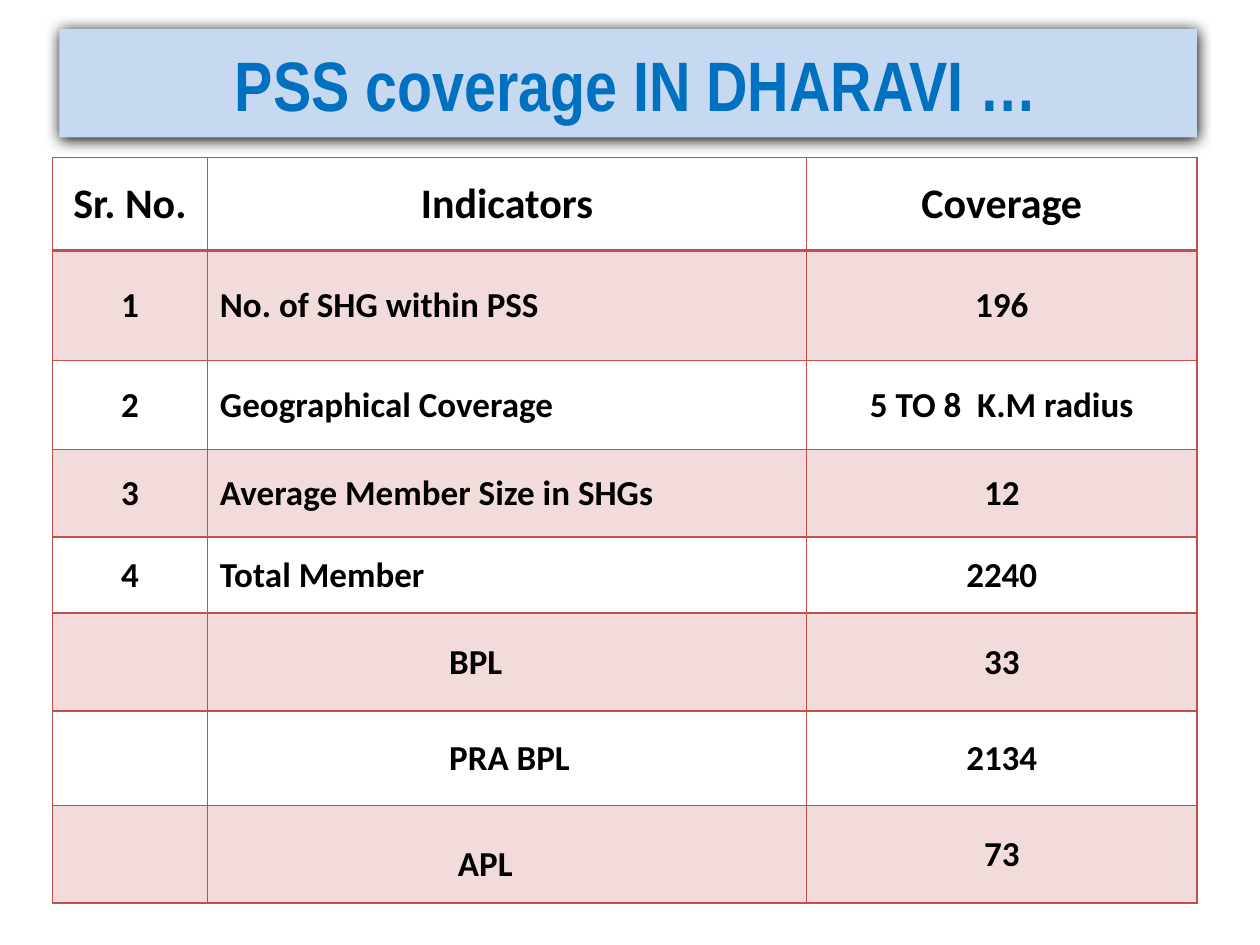
from lxml import etree
from pptx import Presentation
from pptx import util as u
from pptx.dml.color import RGBColor
from pptx.enum import text
from pptx.oxml import ns

RED = RGBColor(0xC0, 0x50, 0x4D)
BLUE = RGBColor(0x00, 0x70, 0xC0)
PALE = RGBColor(0xC6, 0xD9, 0xF1)
BLACK = RGBColor(0, 0, 0)
MID = text.MSO_ANCHOR.MIDDLE
LEFT, CENTER = text.PP_ALIGN.LEFT, text.PP_ALIGN.CENTER

WIDTHS = [88.5, 342.5, 223]
HEIGHTS = [53, 63, 51, 50, 43.5, 56, 54, 55.5]
ROWS = [
    ("Sr. No.", "Indicators", "Coverage"),
    ("1", "No. of SHG within PSS", "196"),
    ("2", "Geographical Coverage", "5 TO 8  K.M radius"),
    ("3", "Average Member Size in SHGs", "12"),
    ("4", "Total Member", "2240"),
    ("", "BPL", "33"),
    ("", "PRA BPL", "2134"),
    ("", "APL", "73"),
]
INDENTS = {"BPL": 131, "PRA BPL": 131, "APL": 136}


def add(parent, tag, **attrs):
    """Append a DrawingML element with the given attributes."""
    node = etree.SubElement(parent, ns.qn("a:" + tag))
    for key, value in attrs.items():
        node.set(key, str(value))
    return node


class Deck:
    fonts = {
        "title": {"name": "Arial Narrow", "size": u.Pt(40), "bold": True},
        "head": {"name": "Calibri", "size": u.Pt(24), "bold": True},
        "body": {"name": "Calibri", "size": u.Pt(20), "bold": True},
    }

    def __init__(self, wide, high):
        self.prs = Presentation()
        self.prs.slide_width, self.prs.slide_height = u.Pt(wide), u.Pt(high)
        self.slide = self.prs.slides.add_slide(self.prs.slide_layouts[5])

    def label(self, para, words, style, color, align):
        para.alignment = align
        run = para.add_run()
        run.text = words
        for key, value in self.fonts[style].items():
            setattr(run.font, key, value)
        run.font.color.rgb = color

    def title(self, words, left, top, wide, high):
        box = self.slide.shapes.title
        place = {"left": left, "top": top, "width": wide, "height": high}
        for key, value in place.items():
            setattr(box, key, u.Pt(value))
        box.fill.solid()
        box.fill.fore_color.rgb = PALE
        self.shade(box)
        frame = box.text_frame
        frame.vertical_anchor = MID
        frame.margin_left = u.Pt(16)
        self.label(frame.paragraphs[0], words, "title", BLUE, CENTER)

    def shade(self, box):
        """Give the box a soft shadow that falls straight down."""
        props = box.element.spPr
        glow = add(add(props, "effectLst"), "outerShdw", blurRad=u.Pt(8.5),
                   dist=u.Pt(1), dir=90 * 60000, algn="t", rotWithShape=0)
        add(glow, "srgbClr", val=BLACK)

    def table(self, rows, left, top):
        frame = self.slide.shapes.add_table(
            len(rows), len(WIDTHS), u.Pt(left), u.Pt(top),
            u.Pt(sum(WIDTHS)), u.Pt(sum(HEIGHTS)))
        grid = frame.table
        grid.first_row = grid.horz_banding = False
        for col, wide in zip(grid.columns, WIDTHS):
            col.width = u.Pt(wide)
        for i, (row, high) in enumerate(zip(rows, HEIGHTS)):
            grid.rows[i].height = u.Pt(high)
            for j, words in enumerate(row):
                self.cell(grid.cell(i, j), words, i, j)

    def cell(self, cell, words, i, j):
        cell.vertical_anchor = MID
        props = cell._tc.tcPr
        thick = {"lnT": 2 if i == 1 else 1, "lnB": 2 if i == 0 else 1}
        for side in ("lnL", "lnR", "lnT", "lnB"):
            line = add(props, side, w=u.Pt(thick.get(side, 1)))
            add(add(line, "solidFill"), "srgbClr", val=RED)
        if i % 2:
            cell.fill.solid()
            cell.fill.fore_color.rgb = RED
            add(props.find(ns.qn("a:solidFill"))[0], "alpha", val=20000)
        else:
            cell.fill.background()
        if not words:
            return
        para = cell.text_frame.paragraphs[0]
        if words in INDENTS:
            para._p.get_or_add_pPr().set("marL", str(u.Pt(INDENTS[words])))
        if words == "APL":
            para.line_spacing = 1.5
        self.label(para, words, "body" if i else "head", BLACK,
                   LEFT if i and j == 1 else CENTER)

    def save(self):
        self.prs.save("out.pptx")


def main():
    deck = Deck(720, 540)
    deck.title("PSS coverage IN DHARAVI …", 34, 16.5, 650, 62)
    deck.table(ROWS, 30, 90)
    deck.save()


if __name__ == "__main__":
    main()
